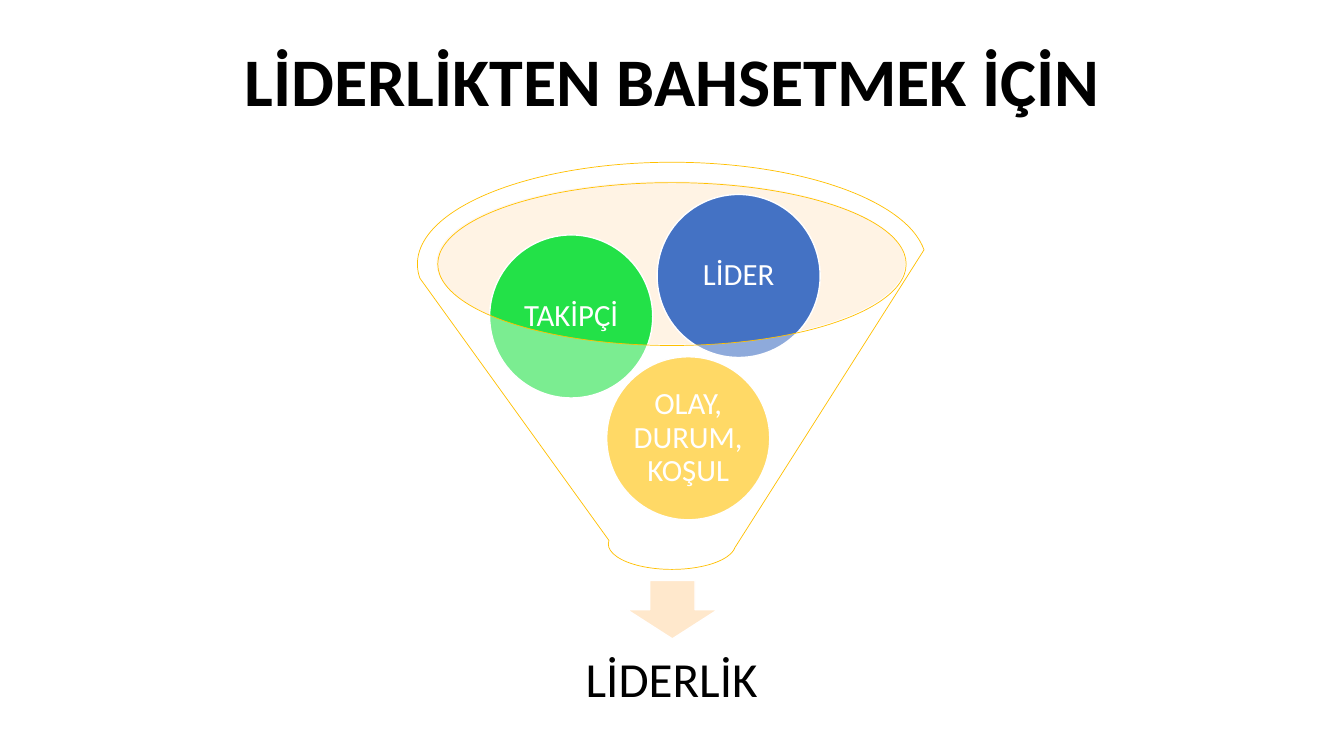
from lxml import etree
from pptx import Presentation
from pptx.dml.color import RGBColor
from pptx.enum.shapes import MSO_SHAPE
from pptx.enum.text import MSO_ANCHOR, PP_ALIGN
from pptx.oxml.ns import qn
from pptx.util import Cm, Pt

ELLIPSE, ARROW, FUNNEL = MSO_SHAPE.OVAL, MSO_SHAPE.DOWN_ARROW, MSO_SHAPE.FUNNEL
MIDDLE, CENTER = MSO_ANCHOR.MIDDLE, PP_ALIGN.CENTER
COLORS = {
    "black": "000000", "white": "FFFFFF", "gold": "FFC000", "green": "23E148",
    "blue": "4472C4", "mouth": "FFE2BD", "arrow": "FFE8CC",
}


def add_shape(kind, left, top, width, height, fill, line=None, line_width=1, opacity=100):
    shape = slide.shapes.add_shape(kind, Cm(left), Cm(top), Cm(width), Cm(height))
    shape.shadow.inherit = False
    shape.fill.solid()
    shape.fill.fore_color.rgb = RGBColor.from_string(COLORS[fill])
    if opacity < 100:
        color = shape.fill._xPr.find(qn("a:solidFill"))[0]
        etree.SubElement(color, qn("a:alpha")).set("val", str(opacity * 1000))
    if line:
        shape.line.color.rgb = RGBColor.from_string(COLORS[line])
        shape.line.width = Pt(line_width)
    else:
        shape.line.fill.background()
    return shape


def write_text(shape, text, size, color, inset, bold=False):
    frame = shape.text_frame
    frame.word_wrap = True
    frame.vertical_anchor = MIDDLE
    frame.margin_left = frame.margin_right = Cm(inset)
    frame.margin_top = frame.margin_bottom = Cm(inset)
    paragraph = frame.paragraphs[0]
    paragraph.alignment = CENTER
    paragraph.line_spacing = 0.9
    run = paragraph.add_run()
    run.text = text
    run.font.name = "Calibri"
    run.font.size = Pt(size)
    run.font.bold = bold
    run.font.color.rgb = RGBColor.from_string(COLORS[color])


presentation = Presentation()
presentation.slide_width = Cm(33.87)
presentation.slide_height = Cm(19.05)
slide = presentation.slides.add_slide(presentation.slide_layouts[6])

# Title
title = slide.shapes.add_textbox(Cm(2.34), Cm(1.02), Cm(29.21), Cm(2.24))
write_text(title, "LİDERLİKTEN BAHSETMEK İÇİN", 48.6, "black", 0.13, bold=True)

# Funnel mouth and outlet arrow
add_shape(ELLIPSE, 11, 4.57, 11.81, 4.11, "mouth", opacity=40)
add_shape(ARROW, 15.8, 14.63, 2.29, 1.47, "arrow", "white")

# Result
result = slide.shapes.add_textbox(Cm(11.43), Cm(15.8), Cm(11), Cm(2.74))
write_text(result, "LİDERLİK", 35, "black", 0.69)

# Ingredients inside the funnel
DIAMETER = 4.11
for text, left, top, fill in [
    ("OLAY, DURUM, KOŞUL", 15.29, 8.99, "gold"),
    ("TAKİPÇİ", 12.34, 5.92, "green"),
    ("LİDER", 16.56, 4.9, "blue"),
]:
    circle = add_shape(ELLIPSE, left, top, DIAMETER, DIAMETER, fill, "white")
    write_text(circle, text, 22, "white", 0.07)

# Translucent funnel in front
add_shape(FUNNEL, 10.52, 4.09, 12.83, 10.26, "white", "gold", 0.5, opacity=40)

presentation.save("out.pptx")
